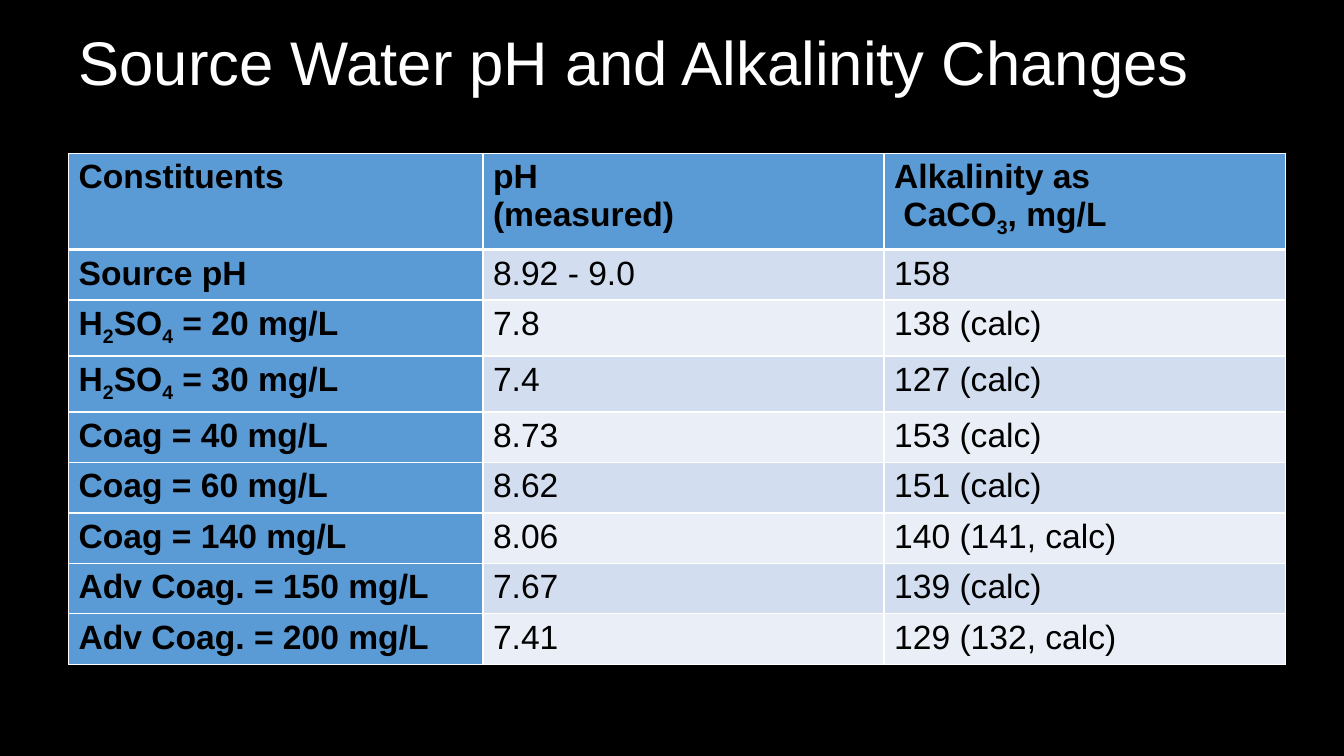
"""Build a slide with a table of source water pH and alkalinity changes."""
from lxml.etree import SubElement
from pptx import Presentation
from pptx.dml.color import RGBColor
from pptx.enum.text import MSO_ANCHOR
from pptx.oxml.ns import qn
from pptx.util import Pt

COLORS = {"black": "000000", "white": "FFFFFF", "head": "5B9BD5",
          "odd": "D2DEEF", "even": "EAEFF7"}
ROWS = [
    ("Constituents", "pH\n(measured)", "Alkalinity as\n CaCO|3|, mg/L"),
    ("Source pH", "8.92 - 9.0", "158"),
    ("H|2|SO|4| = 20 mg/L", "7.8", "138 (calc)"),
    ("H|2|SO|4| = 30 mg/L", "7.4", "127 (calc)"),
    ("Coag = 40 mg/L", "8.73", "153 (calc)"),
    ("Coag = 60 mg/L", "8.62", "151 (calc)"),
    ("Coag = 140 mg/L", "8.06", "140 (141, calc)"),
    ("Adv Coag. = 150 mg/L", "7.67", "139 (calc)"),
    ("Adv Coag. = 200 mg/L", "7.41", "129 (132, calc)"),
]


def write(tf, text, size, color, bold=False):
    """Write text by line; parts at odd places between bars are subscripts."""
    for i, line in enumerate(text.split("\n")):
        p = tf.add_paragraph() if i else tf.paragraphs[0]
        for j, part in enumerate(line.split("|")):
            r = p.add_run()
            r.text = part
            r.font.name = "Arial"
            r.font.size = Pt(size)
            r.font.bold = bold
            r.font.color.rgb = RGBColor.from_string(COLORS[color])
            if j % 2:
                r.font._element.set("baseline", "-25000")


def add_border(cell, side, width):
    """Draw one white edge of a table cell."""
    ln = SubElement(cell._tc.get_or_add_tcPr(), qn(f"a:ln{side}"), w=str(Pt(width)))
    fill = SubElement(ln, qn("a:solidFill"))
    SubElement(fill, qn("a:srgbClr"), val=COLORS["white"])


prs = Presentation()
prs.slide_width, prs.slide_height = Pt(960), Pt(540)
s = prs.slides.add_slide(prs.slide_layouts[6])
s.background.fill.solid()
s.background.fill.fore_color.rgb = RGBColor.from_string(COLORS["black"])

sp = s.shapes.add_textbox(Pt(49), Pt(0), Pt(845), Pt(94))
tf = sp.text_frame
tf.word_wrap = True
tf.vertical_anchor = MSO_ANCHOR.MIDDLE
write(tf, "Source Water pH and Alkalinity Changes", 44, "white")
tf.paragraphs[0].line_spacing = 0.9

frame = s.shapes.add_table(len(ROWS), 3, Pt(49), Pt(109.5), Pt(869), Pt(352.8))
table = frame.table
for column, width in zip(table.columns, (296, 286.5, 286.5)):
    column.width = Pt(width)

for i, row in enumerate(ROWS):
    table.rows[i].height = Pt(29.4)
    for j, text in enumerate(row):
        cell = table.cell(i, j)
        is_head = i == 0 or j == 0
        write(cell.text_frame, text, 24, "black", is_head)
        for side in "LRTB":
            under_header = (i, side) in ((0, "B"), (1, "T"))
            add_border(cell, side, 3 if under_header else 1)
        shade = "head" if is_head else "odd" if i % 2 else "even"
        cell.fill.solid()
        cell.fill.fore_color.rgb = RGBColor.from_string(COLORS[shade])
frame.height = Pt(352.8)

prs.save("out.pptx")
